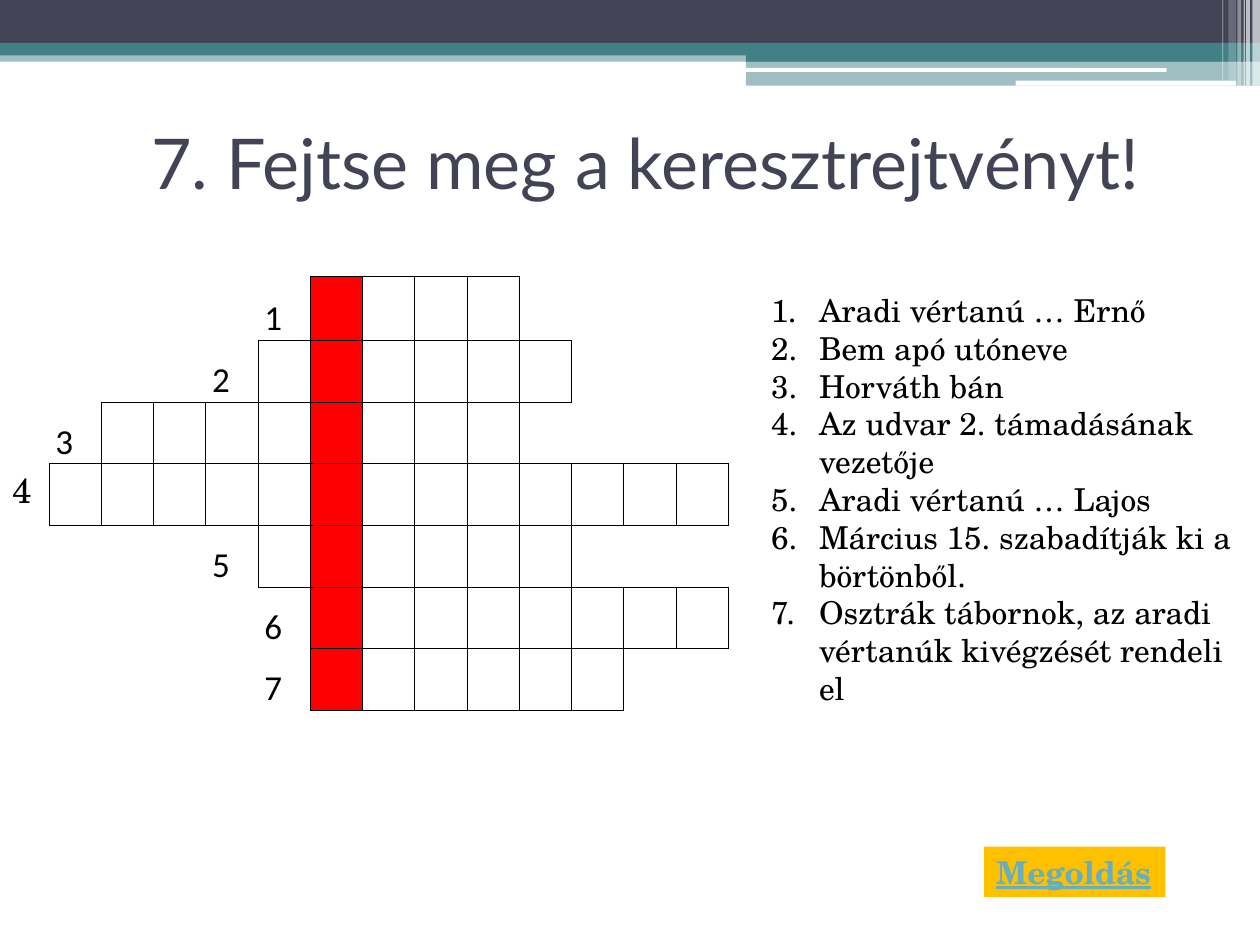
"""Builds the crossword slide with its clues and solution button."""
from typing import NamedTuple

from lxml import etree
from pptx import Presentation
from pptx.dml.color import RGBColor
from pptx.enum.shapes import MSO_SHAPE
from pptx.enum.text import MSO_ANCHOR, MSO_AUTO_SIZE, PP_ALIGN
from pptx.oxml.ns import qn
from pptx.util import Inches, Pt

RECT, ROUNDED = MSO_SHAPE.RECTANGLE, MSO_SHAPE.ROUNDED_RECTANGLE
MIDDLE, BOTTOM = MSO_ANCHOR.MIDDLE, MSO_ANCHOR.BOTTOM
CENTER, LEFT = PP_ALIGN.CENTER, PP_ALIGN.LEFT
NO_AUTOFIT = MSO_AUTO_SIZE.NONE

NAVY, TEAL, WHITE, BLACK = "424456", "438086", "FFFFFF", "000000"
RED, AMBER, LINK_BLUE = "FF0000", "FFC000", "67AFBD"
SERIF = "TeX Gyre Schola"


class Band(NamedTuple):
    left: float
    top: float
    width: float
    height: float
    color: str
    opacity: int = 100
    outline: int = RECT


class Word(NamedTuple):
    start: int
    length: int

    def covers(self, column: int) -> bool:
        return self.start <= column < self.start + self.length


BANDS = [
    Band(0, 0.4, 10, 0.09, TEAL, 50),
    Band(0, 0, 10, 0.34, NAVY),
    Band(0, 0.34, 10, 0.1, TEAL),
    Band(5.92, 0.39, 4.08, 0.1, TEAL),
    Band(5.92, 0.48, 4.08, 0.2, TEAL, 50),
    Band(5.91, 0.54, 3.35, 0.03, WHITE, outline=ROUNDED),
    Band(8.06, 0.64, 1.75, 0.04, WHITE, outline=ROUNDED),
    Band(9.94, 0, 0.06, 0.68, WHITE, 65),
    Band(9.89, 0, 0.03, 0.68, WHITE, 65),
    Band(9.87, 0, 0.01, 0.68, WHITE, 60),
    Band(9.82, 0, 0.03, 0.68, WHITE, 40),
    Band(9.75, 0, 0.06, 0.64, WHITE, 20),
    Band(9.7, 0, 0.01, 0.64, WHITE, 30),
]
WORDS = [Word(5, 4), Word(4, 6), Word(1, 8), Word(0, 13), Word(4, 6), Word(5, 8), Word(5, 6)]
COLUMNS, SOLUTION_COLUMN = 13, 5
CLUES = [
    "Aradi vértanú … Ernő",
    "Bem apó utóneve",
    "Horváth bán",
    "Az udvar 2. támadásának vezetője",
    "Aradi vértanú … Lajos",
    "Március 15. szabadítják ki a börtönből.",
    "Osztrák tábornok, az aradi vértanúk kivégzését rendeli el",
]


def paint(fill, color: str) -> None:
    fill.solid()
    fill.fore_color.rgb = RGBColor.from_string(color)


def write(paragraph, text: str, *, size: float, font: str = SERIF, color: str = BLACK,
          bold: bool = False, underline: bool = False, align=LEFT) -> None:
    paragraph.alignment = align
    run = paragraph.add_run()
    run.text = text
    run.font.size, run.font.name = Pt(size), font
    run.font.bold, run.font.underline = bold, underline
    run.font.color.rgb = RGBColor.from_string(color)


def place(shape, left: float, top: float, width: float, height: float) -> None:
    shape.left, shape.top = Inches(left), Inches(top)
    shape.width, shape.height = Inches(width), Inches(height)


def add_band(slide, band: Band):
    shape = slide.shapes.add_shape(band.outline, *(Inches(length) for length in band[:4]))
    shape.shadow.inherit = False
    shape.line.fill.background()
    paint(shape.fill, band.color)
    if band.opacity < 100:
        color = shape.fill._xPr.find(qn("a:solidFill"))[0]
        etree.SubElement(color, qn("a:alpha"), val=str(band.opacity * 1000))
    return shape


def add_border(cell, side: str, visible: bool) -> None:
    line = etree.SubElement(cell._tc.get_or_add_tcPr(), qn(f"a:ln{side}"), w=str(Pt(0.5)))
    if visible:
        solid = etree.SubElement(line, qn("a:solidFill"))
        etree.SubElement(solid, qn("a:srgbClr"), val=BLACK)
    else:
        etree.SubElement(line, qn("a:noFill"))


def in_word(row: int, column: int) -> bool:
    return 0 <= row < len(WORDS) and WORDS[row].covers(column)


def add_crossword(slide) -> None:
    grid = slide.shapes.add_table(len(WORDS), COLUMNS, Inches(0.39), Inches(2.19),
                                  Inches(5.39), Inches(3.44)).table
    grid.first_row = grid.horz_banding = False
    for column in grid.columns:
        column.width = Inches(5.39 / COLUMNS)
    for row, word in enumerate(WORDS):
        grid.rows[row].height = Inches(0.49 if row else 0.51)
        for column in range(COLUMNS):
            cell = grid.cell(row, column)
            neighbours = {"L": (row, column - 1), "R": (row, column + 1),
                          "T": (row - 1, column), "B": (row + 1, column)}
            for side, neighbour in neighbours.items():
                add_border(cell, side, in_word(row, column) or in_word(*neighbour))
            if column == SOLUTION_COLUMN:
                paint(cell.fill, RED)
            else:
                cell.fill.background()
            if column == word.start - 1:
                cell.vertical_anchor = BOTTOM
                cell.margin_left = Inches(0.05)
                cell.margin_right = cell.margin_top = Inches(0.01)
                cell.margin_bottom = 0
                write(cell.text_frame.paragraphs[0], str(row + 1), size=20, font="Calibri")


def add_clues(body) -> None:
    place(body, 6.02, 2.26, 3.98, 3.13)
    frame = body.text_frame
    frame.auto_size = NO_AUTOFIT
    for index, clue in enumerate(CLUES):
        paragraph = frame.add_paragraph() if index else frame.paragraphs[0]
        write(paragraph, clue, size=18)
        paragraph.space_before = Pt(0)
        properties = paragraph._p.get_or_add_pPr()
        properties.set("marL", str(Inches(0.38)))
        properties.set("indent", str(-Inches(0.38)))
        etree.SubElement(properties, qn("a:buFont"), typeface="+mj-lt")
        etree.SubElement(properties, qn("a:buAutoNum"), type="arabicPeriod")


def main() -> None:
    deck = Presentation()
    deck.slide_width, deck.slide_height = Inches(10), Inches(7.5)
    slide = deck.slides.add_slide(deck.slide_layouts[1])
    for band in BANDS:
        add_band(slide, band)

    title = slide.shapes.title
    place(title, 0.62, 0.7, 9, 1.17)
    title.text_frame.auto_size = NO_AUTOFIT
    title.text_frame.vertical_anchor = MIDDLE
    write(title.text_frame.paragraphs[0], "7. Fejtse meg a keresztrejtvényt!",
          size=40, font="Lato", color=NAVY, align=CENTER)

    solution = add_band(slide, Band(7.81, 6.72, 1.44, 0.4, AMBER))
    solution.text_frame.word_wrap = False
    write(solution.text_frame.paragraphs[0], "Megoldás", size=18, color=LINK_BLUE,
          bold=True, underline=True)

    add_crossword(slide)
    add_clues(slide.placeholders[1])

    fourth_number = slide.shapes.add_textbox(Inches(0), Inches(3.67), Inches(0.23), Inches(0.44))
    fourth_number.text_frame.word_wrap = True
    write(fourth_number.text_frame.paragraphs[0], "4", size=20)
    deck.save("out.pptx")


if __name__ == "__main__":
    main()
